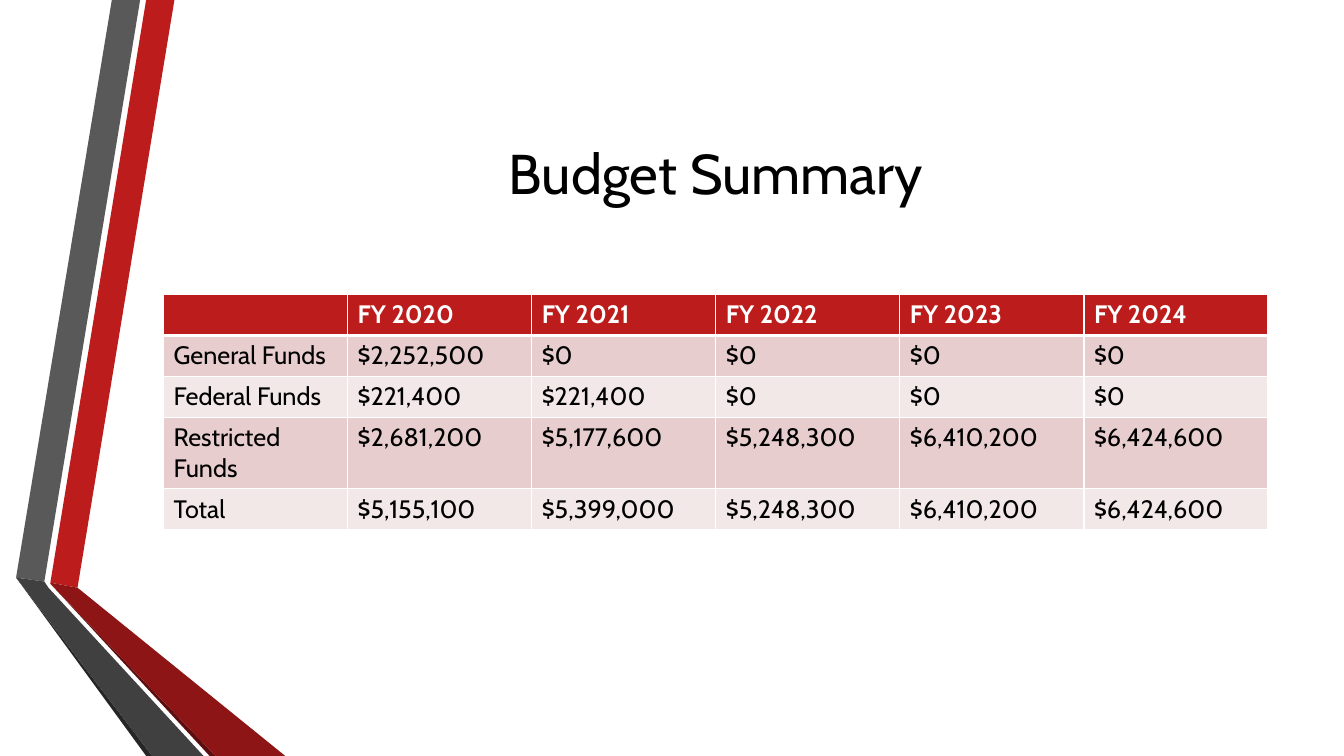
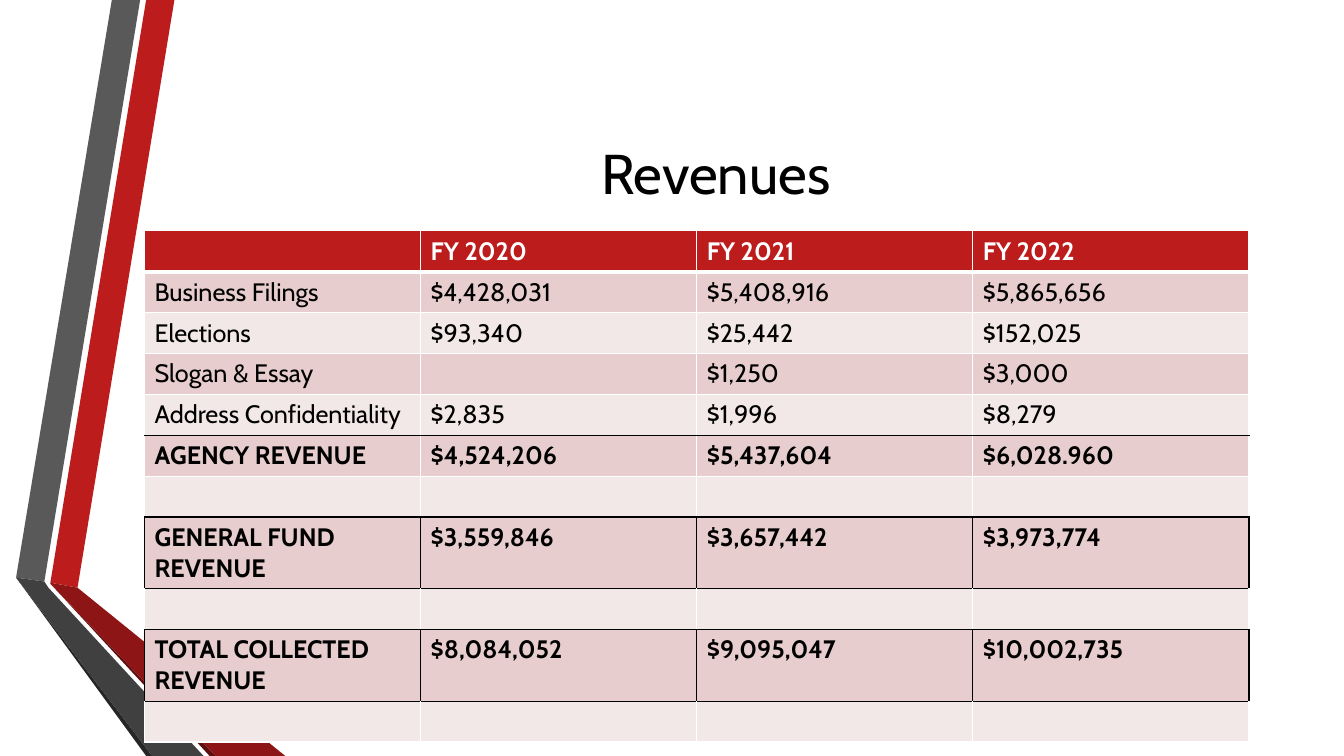
from dataclasses import dataclass
from enum import Enum

from lxml.etree import SubElement
from pptx import Presentation
from pptx.dml.color import RGBColor
from pptx.enum.text import MSO_ANCHOR, PP_ALIGN
from pptx.oxml.ns import qn
from pptx.util import Pt


@dataclass(frozen=True)
class Theme:
    font: str = "Cabin"
    title_size: float = 40
    table_size: float = 18
    thin_line: float = 1
    header_line: float = 3
    row_height: float = 29.2
    tall_row_height: float = 50.4
    ink: str = "000000"
    paper: str = "FFFFFF"
    red: str = "BC1C1C"
    red_shade: str = "8D1515"
    red_edge: str = "5E0E0E"
    gray: str = "595959"
    gray_shade: str = "404040"
    gray_edge: str = "262626"
    odd_row: str = "E7CDCD"
    even_row: str = "F3E8E8"


@dataclass(frozen=True)
class Box:
    left: float
    top: float
    width: float
    height: float = 0


class RowKind(Enum):
    HEADER = "header"
    PLAIN = "plain"
    SUBTOTAL = "subtotal"
    BOXED = "boxed"


@dataclass(frozen=True)
class Row:
    values: tuple
    kind: RowKind = RowKind.PLAIN
    tall: bool = False


THEME = Theme()
SLIDE_BOX = Box(0, 0, 960, 540)
TITLE_BOX = Box(116.8, 54, 789, 138)

RIBBONS = (
    (THEME.red, ((36, 416.2), (55.4, 419.8), (124.6, 0), (104.4, 0))),
    (THEME.gray, ((100.1, 0), (79.9, 0), (11.5, 412.6), (31.7, 415.4))),
    (THEME.gray_edge, ((11.5, 412.6), (104.4, 540), (108.7, 540))),
    (THEME.red_edge, ((36, 416.9), (149.8, 540), (154.1, 540))),
    (THEME.red_shade, ((36, 416.2), (36, 416.9), (154.1, 540), (203.8, 540), (55.4, 419.8))),
    (THEME.gray_shade, ((145.4, 540), (34.6, 419.8), (31.7, 415.4), (11.5, 412.6), (108.7, 540))),
)

BUDGET_ROWS = (
    Row(("", "FY 2020", "FY 2021", "FY 2022", "FY 2023", "FY 2024"), RowKind.HEADER),
    Row(("General Funds", "$2,252,500", "$0", "$0", "$0", "$0")),
    Row(("Federal Funds", "$221,400", "$221,400", "$0", "$0", "$0")),
    Row(("Restricted Funds", "$2,681,200", "$5,177,600", "$5,248,300", "$6,410,200", "$6,424,600"), tall=True),
    Row(("Total", "$5,155,100", "$5,399,000", "$5,248,300", "$6,410,200", "$6,424,600")),
)

SPACER_ROW = Row(("",) * 4)
REVENUE_ROWS = (
    Row(("", "FY 2020", "FY 2021", "FY 2022"), RowKind.HEADER),
    Row(("Business Filings", "$4,428,031", "$5,408,916", "$5,865,656")),
    Row(("Elections", "$93,340", "$25,442", "$152,025")),
    Row(("Slogan & Essay", "", "$1,250", "$3,000")),
    Row(("Address Confidentiality", "$2,835", "$1,996", "$8,279")),
    Row(("AGENCY REVENUE", "$4,524,206", "$5,437,604", "$6,028.960"), RowKind.SUBTOTAL),
    SPACER_ROW,
    Row(("GENERAL FUND REVENUE", "$3,559,846", "$3,657,442", "$3,973,774"), RowKind.BOXED, tall=True),
    SPACER_ROW,
    Row(("TOTAL COLLECTED REVENUE", "$8,084,052", "$9,095,047", "$10,002,735"), RowKind.BOXED, tall=True),
    SPACER_ROW,
)


def add_run(paragraph, text, size, color, bold=False):
    run = paragraph.add_run()
    run.text = text
    run.font.name = THEME.font
    run.font.size = Pt(size)
    run.font.bold = bold
    run.font.color.rgb = RGBColor.from_string(color)


def place(shape, box):
    shape.left, shape.top = Pt(box.left), Pt(box.top)
    shape.width, shape.height = Pt(box.width), Pt(box.height)


def draw_ribbons(slide, layout, box):
    for shape_id, (color, points) in enumerate(RIBBONS, start=20):
        start, *others = [(Pt(box.left + x), Pt(box.top + y)) for x, y in points]
        builder = slide.shapes.build_freeform(*start)
        builder.add_line_segments(others, close=True)
        shape = builder.convert_to_shape()
        shape.shadow.inherit = False
        shape.fill.solid()
        shape.fill.fore_color.rgb = RGBColor.from_string(color)
        shape.line.fill.background()
        shape.element.nvSpPr.cNvPr.set("id", str(shape_id))
        layout.shapes.element.append(shape.element)


def format_layout(layout):
    title = layout.placeholders[0]
    place(title, TITLE_BOX)
    title.text_frame.vertical_anchor = MSO_ANCHOR.MIDDLE


def write_title(slide, text):
    paragraph = slide.shapes.title.text_frame.paragraphs[0]
    paragraph.alignment = PP_ALIGN.CENTER
    add_run(paragraph, text, THEME.title_size, THEME.ink)


def rule_between(upper, lower):
    if upper == RowKind.HEADER:
        return THEME.paper, THEME.header_line
    if RowKind.BOXED in (upper, lower) or lower == RowKind.SUBTOTAL:
        return THEME.ink, THEME.thin_line
    return THEME.paper, THEME.thin_line


def set_borders(cell, side, top, bottom):
    properties = cell._tc.get_or_add_tcPr()
    for tag, (color, width) in zip(("lnL", "lnR", "lnT", "lnB"), (side, side, top, bottom)):
        line = SubElement(properties, qn(f"a:{tag}"), w=str(Pt(width)))
        fill = SubElement(line, qn("a:solidFill"))
        SubElement(fill, qn("a:srgbClr"), val=color)


def row_fill(index):
    if index == 0:
        return THEME.red
    return THEME.odd_row if index % 2 else THEME.even_row


def add_fund_table(slide, rows, box):
    heights = [THEME.tall_row_height if row.tall else THEME.row_height for row in rows]
    frame = slide.shapes.add_table(
        len(rows), len(rows[0].values), Pt(box.left), Pt(box.top), Pt(box.width), Pt(sum(heights))
    )
    table = frame.table
    kinds = [None, *(row.kind for row in rows), None]
    rules = [rule_between(upper, lower) for upper, lower in zip(kinds, kinds[1:])]
    for index, row in enumerate(rows):
        table.rows[index].height = Pt(heights[index])
        side = (THEME.ink if row.kind == RowKind.BOXED else THEME.paper, THEME.thin_line)
        color = THEME.paper if row.kind == RowKind.HEADER else THEME.ink
        for column, value in enumerate(row.values):
            cell = table.cell(index, column)
            set_borders(cell, side, rules[index], rules[index + 1])
            cell.fill.solid()
            cell.fill.fore_color.rgb = RGBColor.from_string(row_fill(index))
            paragraph = cell.text_frame.paragraphs[0]
            if value:
                add_run(paragraph, value, THEME.table_size, color, row.kind != RowKind.PLAIN)
            else:
                paragraph.font.name = THEME.font
                paragraph.font.size = Pt(THEME.table_size)


def add_table_slide(presentation, layout, title, rows, box):
    slide = presentation.slides.add_slide(layout)
    write_title(slide, title)
    add_fund_table(slide, rows, box)
    return slide


def main():
    presentation = Presentation()
    presentation.slide_width = Pt(SLIDE_BOX.width)
    presentation.slide_height = Pt(SLIDE_BOX.height)
    layout = presentation.slide_layouts.get_by_name("Title Only")
    format_layout(layout)
    budget = add_table_slide(
        presentation, layout, "Budget Summary", BUDGET_ROWS, Box(116.8, 210.4, 789)
    )
    draw_ribbons(budget, layout, SLIDE_BOX)
    add_table_slide(presentation, layout, "Revenues", REVENUE_ROWS, Box(103.2, 164.9, 789))
    presentation.save("out.pptx")


if __name__ == "__main__":
    main()
